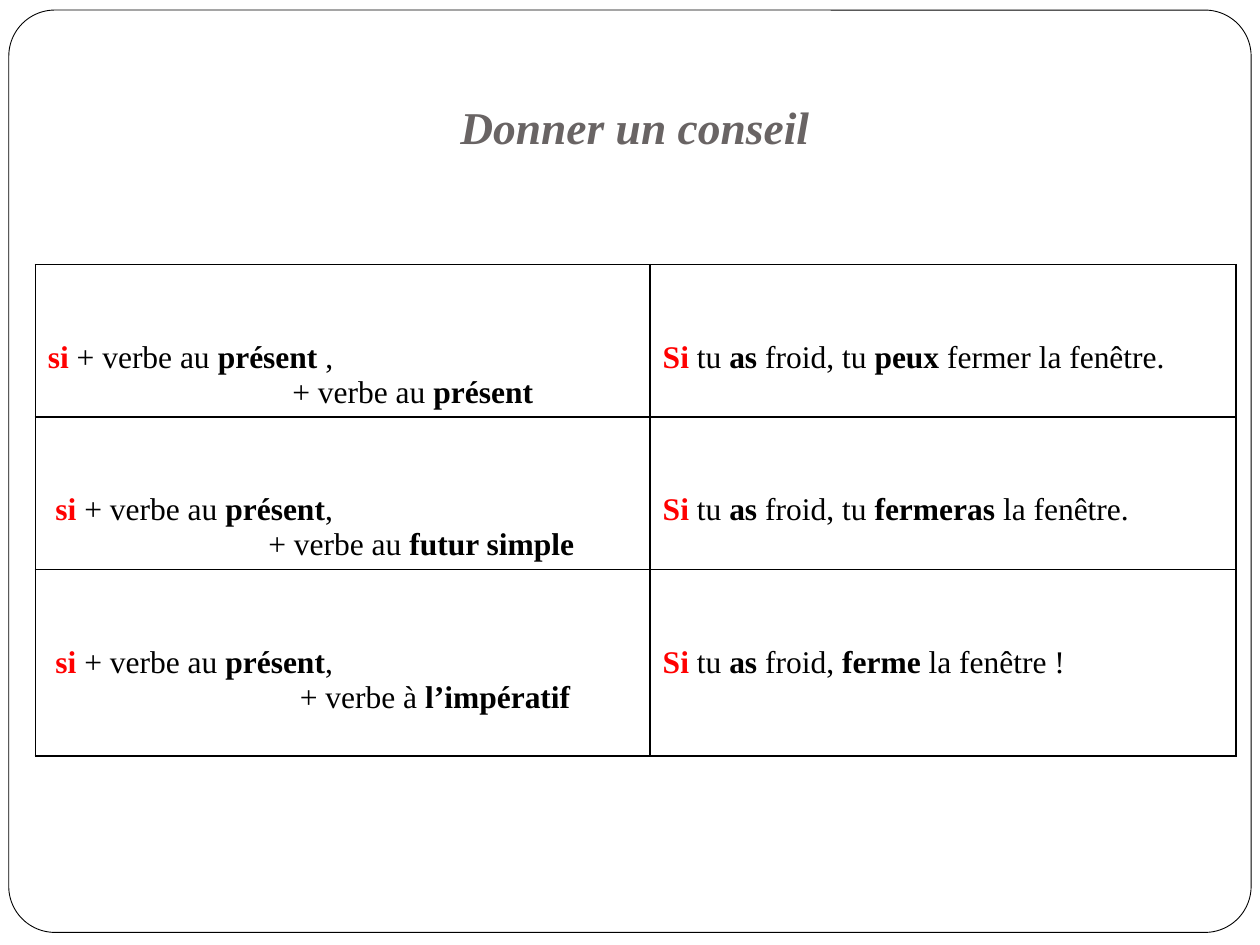
from lxml import etree
from pptx import Presentation, util as u
from pptx.dml.color import RGBColor
from pptx.enum import shapes, text
from pptx.oxml.ns import qn

FONT = "Times New Roman"
BLACK, RED, GREY, WHITE = "000000", "FF0000", "696464", "FFFFFF"

# Content: *...* is bold; each line is (red keyword, rest, indent in inches)
TITLE = "Donner un conseil"
ROWS = [
    ([("si ", "+ verbe au *présent* ,", 0), ("", "+ verbe au *présent*", 1.94)],
     [("Si", " tu *as* froid, tu *peux *fermer la fenêtre.", 0)]),
    ([("si ", "+ verbe au *présent*,", 0.06), ("", "+ verbe au *futur simple*", 1.75)],
     [("Si", " tu *as* froid, tu* fermeras *la fenêtre.", 0)]),
    ([("si ", "+ verbe au *présent*,", 0.06), ("", "+ verbe à *l’impératif*", 2)],
     [("Si", " tu *as* froid, *ferme* la fenêtre !", 0)]),
]
COLS = [4.88, 4.65]
HEIGHTS = [1.21, 1.21, 1.48]
LEFT, TOP = 0.28, 2.1


def rgb(value):
    return RGBColor.from_string(value)


def add_run(p, words, size=18, color=BLACK, bold=False, italic=False):
    r = p.add_run()
    r.text = words
    f = r.font
    f.name, f.size, f.bold, f.italic = FONT, u.Pt(size), bold, italic
    f.color.rgb = rgb(color)


def add_line(p, keyword, rest, indent):
    pPr = p._p.get_or_add_pPr()
    pPr.set("marL", str(u.Inches(indent)))
    pPr.set("indent", "0")
    if keyword:
        add_run(p, keyword, color=RED, bold=True)
    for i, part in enumerate(rest.split("*")):
        if part:
            add_run(p, part, bold=i % 2 == 1)


def set_borders(cell, color=BLACK, width=1):
    tcPr = cell._tc.get_or_add_tcPr()
    for i, side in enumerate(("lnL", "lnR", "lnT", "lnB")):
        ln = etree.Element(qn("a:" + side), w=str(u.Pt(width)))
        fill = etree.SubElement(ln, qn("a:solidFill"))
        etree.SubElement(fill, qn("a:srgbClr"), val=color)
        tcPr.insert(i, ln)


prs = Presentation()
prs.slide_width, prs.slide_height = u.Inches(10), u.Inches(7.5)
s = prs.slides.add_slide(prs.slide_layouts[5])

# Rounded frame, behind the title
frame = s.shapes.add_shape(shapes.MSO_SHAPE.ROUNDED_RECTANGLE, u.Inches(0.07),
                           u.Inches(0.08), u.Inches(9.86), u.Inches(7.32))
frame.adjustments[0] = 0.05
frame.shadow.inherit = False
frame.fill.solid()
frame.fill.fore_color.rgb = rgb(WHITE)
frame.line.color.rgb = rgb(BLACK)
frame.line.width = u.Pt(0.5)
title = s.shapes.title
title._element.addprevious(frame._element)

# Title
title.left, title.top = u.Inches(0.24), u.Inches(0.6)
title.width, title.height = u.Inches(9.6), u.Inches(0.8)
tf = title.text_frame
tf.vertical_anchor = text.MSO_ANCHOR.MIDDLE
p = tf.paragraphs[0]
p.alignment = text.PP_ALIGN.CENTER
add_run(p, TITLE, size=26, color=GREY, bold=True, italic=True)

# Table of patterns and examples
table = s.shapes.add_table(len(ROWS), len(COLS), u.Inches(LEFT), u.Inches(TOP),
                           u.Inches(sum(COLS)), u.Inches(sum(HEIGHTS))).table
table.first_row = table.horz_banding = False
for col, width in zip(table.columns, COLS):
    col.width = u.Inches(width)
for row, height, contents in zip(table.rows, HEIGHTS, ROWS):
    row.height = u.Inches(height)
    for cell, lines in zip(row.cells, contents):
        cell.fill.background()
        set_borders(cell)
        cell.margin_top = u.Inches(0.6)
        tf = cell.text_frame
        for i, line in enumerate(lines):
            add_line(tf.add_paragraph() if i else tf.paragraphs[0], *line)

prs.save("out.pptx")
